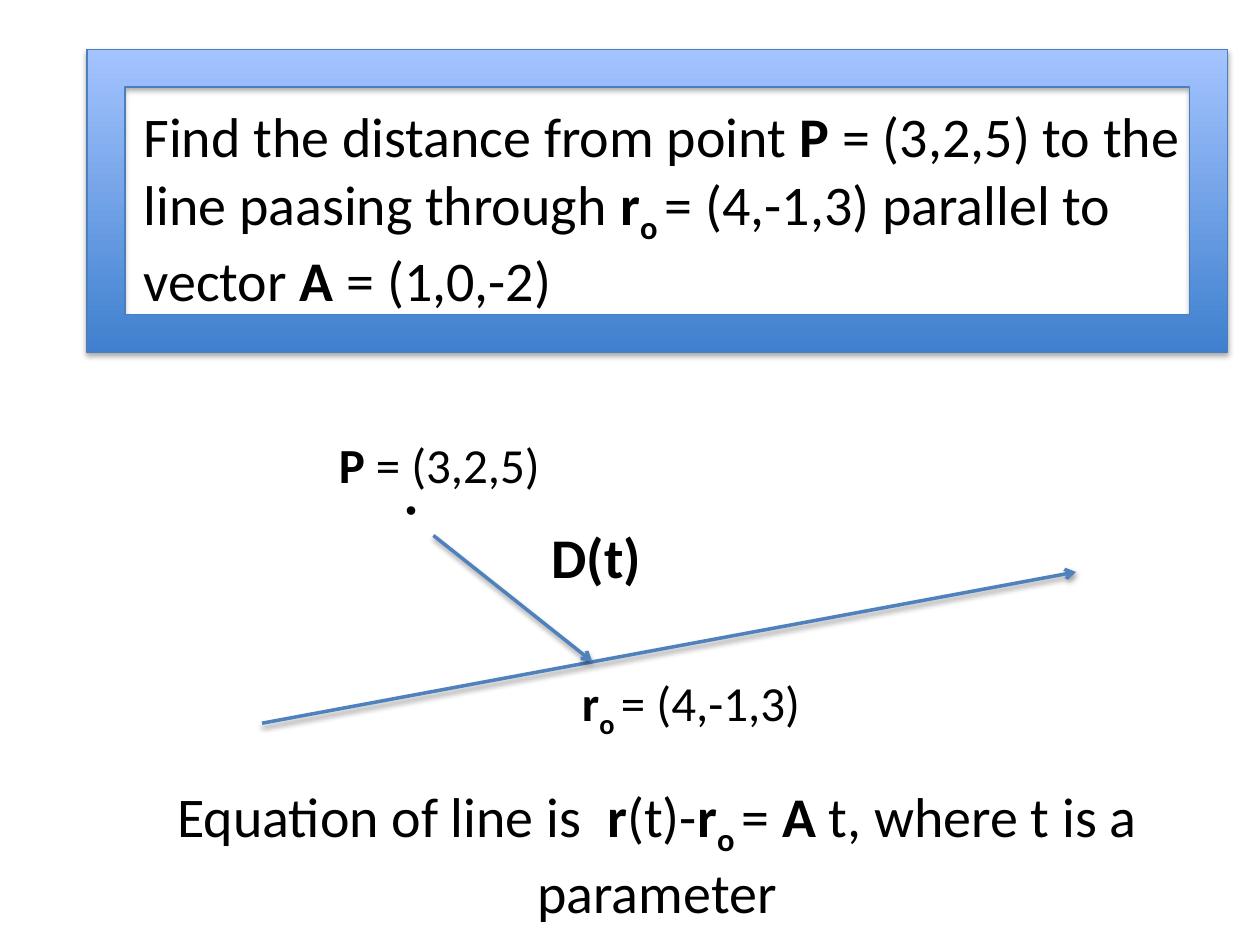
from lxml import etree
from pptx import Presentation
from pptx.dml.color import RGBColor
from pptx.enum.shapes import MSO_CONNECTOR, MSO_SHAPE
from pptx.enum.text import PP_ALIGN
from pptx.oxml.ns import qn
from pptx.util import Inches, Pt

BLACK = RGBColor(0x00, 0x00, 0x00)
ARROW_BLUE = RGBColor(0x4F, 0x81, 0xBD)
FRAME_LINE = RGBColor(0x4B, 0x7E, 0xBC)
FRAME_GRADIENT = (RGBColor(0x3F, 0x80, 0xCE), RGBColor(0xA4, 0xC4, 0xFF))

# Run styles
PLAIN, BOLD, SUB = "plain", "bold", "subscript"
R_ZERO = [("r", BOLD), ("o ", SUB)]

# Content: each text has a place, a font and a list of paragraphs made of runs
PROBLEM = dict(
    at=(1.04, 0.76, 8.52, 1.72), size=32,
    paragraphs=[[("Find the distance from point ", PLAIN), ("P", BOLD),
                 (" = (3,2,5) to the line paasing through ", PLAIN), *R_ZERO,
                 ("= (4,-1,3) parallel to vector ", PLAIN), ("A", BOLD),
                 (" = (1,0,-2)", PLAIN)]])
POINT_DOT = dict(at=(3.12, 3.84, 0.32, 0.4), size=18, font="Arial", wrap=False,
                 paragraphs=[[("•", PLAIN)]])
POINT_LABELS = dict(
    at=(2.59, 3.4, 4.02, 2.46), size=28,
    paragraphs=[[("P", BOLD), (" = (3,2,5)", PLAIN)],
                [*R_ZERO, ("= (4,-1,3)", PLAIN)]],
    next_indent=1.93, next_gap=102.5)
EQUATION = dict(
    at=(0.69, 6.15, 9.05, 1.18), size=32, align=PP_ALIGN.CENTER,
    paragraphs=[[("Equation of line is  ", PLAIN), ("r", BOLD), ("(t)-", PLAIN),
                 *R_ZERO, ("= ", PLAIN), ("A", BOLD),
                 (" t, where t is a parameter", PLAIN)]])
DISTANCE_LABEL = dict(at=(4.28, 4.1, 0.92, 0.64), size=32, wrap=False,
                      paragraphs=[[("D(t)", BOLD)]])

FRAME_AT = (0.69, 0.39, 9.05, 2.41)
LINE_ARROW = (2.08, 5.74, 8.54, 4.54)
DISTANCE_ARROW = (3.44, 4.25, 4.7, 5.25)


def add_shadow(shape, opacity, distance):
    """Give the shape a soft black shadow that falls straight down."""
    properties = shape._element.spPr
    effects = etree.SubElement(properties, qn("a:effectLst"))
    shadow = etree.SubElement(
        effects, qn("a:outerShdw"), blurRad=str(Pt(3.1)), dist=str(Pt(distance)),
        dir="5400000", rotWithShape="0")
    color = etree.SubElement(shadow, qn("a:srgbClr"), val=str(BLACK))
    etree.SubElement(color, qn("a:alpha"), val=str(opacity * 1000))


def add_text(slide, at, size, paragraphs, font="Calibri", align=PP_ALIGN.LEFT,
             wrap=True, next_indent=0, next_gap=0):
    frame = slide.shapes.add_textbox(*map(Inches, at)).text_frame
    frame.word_wrap = wrap
    for index, runs in enumerate(paragraphs):
        paragraph = frame.add_paragraph() if index else frame.paragraphs[0]
        paragraph.alignment = align
        if index:
            paragraph.space_before = Pt(next_gap)
            paragraph._p.get_or_add_pPr().set("marL", str(Inches(next_indent)))
        for text, style in runs:
            run = paragraph.add_run()
            run.text = text
            values = dict(name=font, size=Pt(size), bold=style != PLAIN)
            for name, value in values.items():
                setattr(run.font, name, value)
            run.font.color.rgb = BLACK
            if style == SUB:
                run._r.get_or_add_rPr().set("baseline", "-25000")


def add_frame(slide):
    frame = slide.shapes.add_shape(MSO_SHAPE.FRAME, *map(Inches, FRAME_AT))
    frame.fill.gradient()
    frame.fill.gradient_angle = 90
    for stop, color in zip(frame.fill.gradient_stops, FRAME_GRADIENT):
        stop.color.rgb = color
    frame.line.color.rgb = FRAME_LINE
    frame.line.width = Pt(0.75)
    add_shadow(frame, 35, 1.8)


def add_arrow(slide, ends):
    arrow = slide.shapes.add_connector(MSO_CONNECTOR.STRAIGHT, *map(Inches, ends))
    arrow.line.color.rgb = ARROW_BLUE
    arrow.line.width = Pt(2)
    etree.SubElement(arrow.line._get_or_add_ln(), qn("a:tailEnd"), type="arrow")
    add_shadow(arrow, 38, 1.6)


def main():
    presentation = Presentation()
    presentation.slide_width, presentation.slide_height = Inches(10), Inches(7.5)
    slide = presentation.slides.add_slide(presentation.slide_layouts[6])

    # Problem statement in its frame
    add_text(slide, **PROBLEM)
    add_frame(slide)

    # Sketch of the line, the point and the distance vector
    add_arrow(slide, LINE_ARROW)
    add_text(slide, **POINT_DOT)
    add_arrow(slide, DISTANCE_ARROW)
    add_text(slide, **POINT_LABELS)

    # Equation and distance label
    add_text(slide, **EQUATION)
    add_text(slide, **DISTANCE_LABEL)

    presentation.save("out.pptx")


if __name__ == "__main__":
    main()
